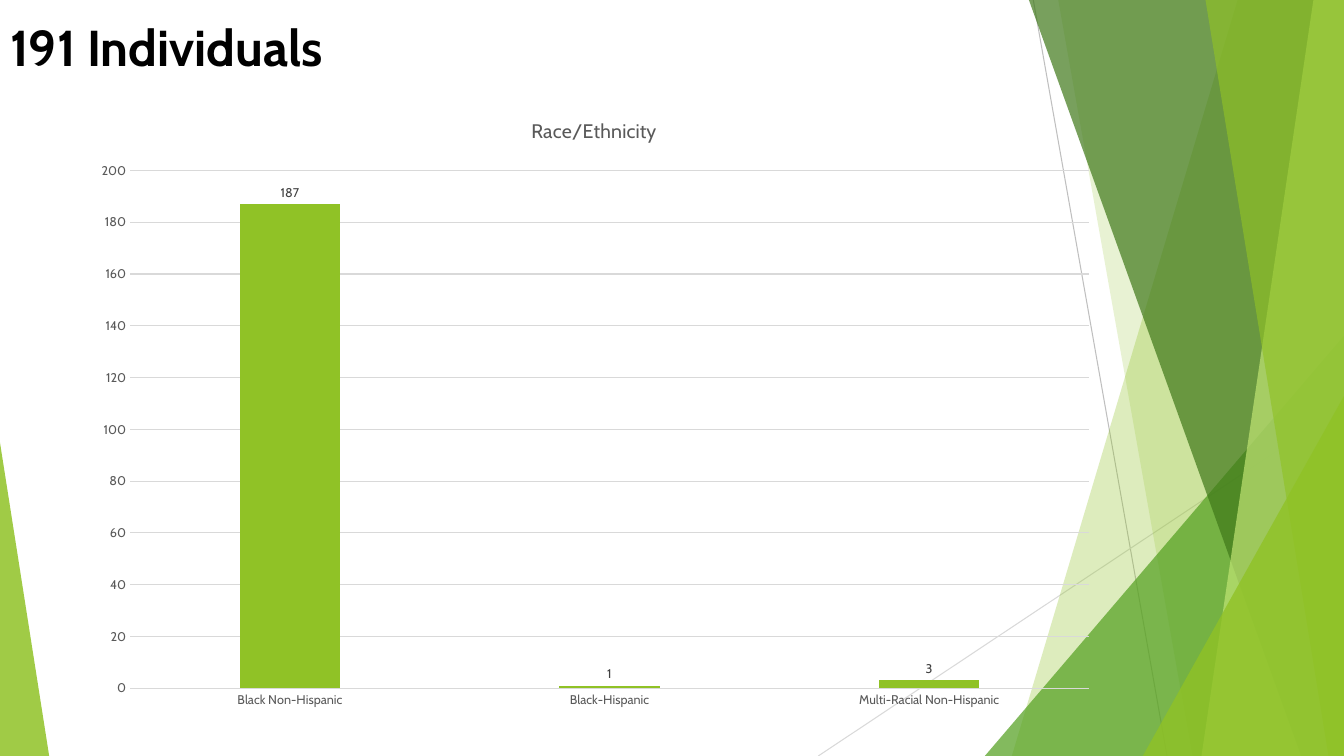
from lxml import etree
from pptx import Presentation
from pptx.chart.data import CategoryChartData
from pptx.dml.color import RGBColor
from pptx.enum.chart import XL_CHART_TYPE, XL_LABEL_POSITION, XL_TICK_MARK
from pptx.enum.shapes import MSO_CONNECTOR, MSO_SHAPE
from pptx.enum.text import MSO_ANCHOR, MSO_AUTO_SIZE, PP_ALIGN
from pptx.oxml import parse_xml
from pptx.oxml.ns import nsdecls, qn
from pptx.util import Cm, Pt

LIME = RGBColor(0x90, 0xC2, 0x26)
GREEN = RGBColor(0x54, 0xA0, 0x21)
FOREST = RGBColor(0x3F, 0x78, 0x19)
PALE_LIME = RGBColor(0xC0, 0xE4, 0x74)
BLACK = RGBColor(0x00, 0x00, 0x00)
CHARCOAL = RGBColor(0x40, 0x40, 0x40)
GREY = RGBColor(0x59, 0x59, 0x59)
SILVER = RGBColor(0xBF, 0xBF, 0xBF)
LIGHT_GREY = RGBColor(0xD9, 0xD9, 0xD9)
WIDTH, HEIGHT = 33.87, 19.05


class SlideBuilder:
    """Holds the style and the current slide, with a method per element."""

    font_name = "Cabin"
    hairline = Pt(0.75)

    def __init__(self, slide):
        self.slide = slide

    def style_font(self, font, size, color, bold=False):
        font.name = self.font_name
        font.size = Pt(size)
        font.bold = bold
        font.color.rgb = color

    def style_line(self, line, color):
        line.color.rgb = color
        line.width = self.hairline

    def paint(self, shape, color, opacity):
        shape.shadow.inherit = False
        shape.fill.solid()
        shape.fill.fore_color.rgb = color
        shape.line.fill.background()
        tint = shape.fill._xPr.find(".//" + qn("a:srgbClr"))
        etree.SubElement(tint, qn("a:alpha"), val=str(opacity * 1000))

    def ray(self, start, end, color):
        ends = [Cm(value) for value in (*start, *end)]
        ray = self.slide.shapes.add_connector(MSO_CONNECTOR.STRAIGHT, *ends)
        self.style_line(ray.line, color)
        etree.SubElement(ray._element.spPr, qn("a:effectLst"))

    def shard(self, top_x, bottom_x, color, opacity):
        outline = self.slide.shapes.build_freeform(Cm(top_x), Cm(0))
        corners = [(WIDTH, 0), (WIDTH, HEIGHT), (bottom_x, HEIGHT)]
        outline.add_line_segments([(Cm(x), Cm(y)) for x, y in corners])
        self.paint(outline.convert_to_shape(), color, opacity)

    def wedge(self, left, top, width, apex, color, opacity):
        wedge = self.slide.shapes.add_shape(
            MSO_SHAPE.ISOSCELES_TRIANGLE, Cm(left), Cm(top), Cm(width), Cm(HEIGHT - top))
        wedge.adjustments[0] = apex
        self.paint(wedge, color, opacity)

    def title(self, text, left, top, width, height):
        title = self.slide.shapes.title
        title.left, title.top = Cm(left), Cm(top)
        title.width, title.height = Cm(width), Cm(height)
        frame = title.text_frame
        frame.text = text
        frame.word_wrap = True
        frame.auto_size = MSO_AUTO_SIZE.SHAPE_TO_FIT_TEXT
        frame.vertical_anchor = MSO_ANCHOR.TOP
        heading = frame.paragraphs[0]
        heading.alignment = PP_ALIGN.LEFT
        self.style_font(heading.runs[0].font, 36, BLACK, bold=True)

    def column_chart(self, caption, counts, left, top, width, height):
        data = CategoryChartData()
        data.categories = list(counts)
        data.add_series("Series 1", list(counts.values()))
        chart = self.slide.shapes.add_chart(
            XL_CHART_TYPE.COLUMN_CLUSTERED, Cm(left), Cm(top), Cm(width), Cm(height), data).chart
        self.style_font(chart.font, 10, BLACK)
        chart.has_legend = False
        chart.has_title = True
        chart.chart_title.text_frame.text = caption
        chart.chart_title.include_in_layout = False
        self.style_font(chart.chart_title.text_frame.paragraphs[0].runs[0].font, 14, GREY)

        for axis in (chart.category_axis, chart.value_axis):
            axis.major_tick_mark = axis.minor_tick_mark = XL_TICK_MARK.NONE
            self.style_font(axis.tick_labels.font, 9, GREY)
        self.style_line(chart.category_axis.format.line, LIGHT_GREY)
        scale = chart.value_axis
        scale.minimum_scale, scale.maximum_scale, scale.major_unit = 0, 200, 20
        scale.format.line.fill.background()
        self.style_line(scale.major_gridlines.format.line, LIGHT_GREY)

        plot = chart.plots[0]
        plot.gap_width, plot.overlap = 219, -27
        plot.vary_by_categories = False
        columns = plot.series[0]
        columns.format.fill.solid()
        columns.format.fill.fore_color.rgb = LIME
        labels = columns.data_labels
        labels.show_value = True
        labels.position = XL_LABEL_POSITION.OUTSIDE_END
        self.style_font(labels.font, 9, CHARCOAL)
        self.place_plot(chart, x=0.05, y=0.12, w=0.93, h=0.83)

    def place_plot(self, chart, **fractions):
        plot_area = chart._chartSpace.chart.plotArea
        for automatic in plot_area.findall(qn("c:layout")):
            plot_area.remove(automatic)
        layout = parse_xml(
            f'<c:layout {nsdecls("c")}><c:manualLayout><c:layoutTarget val="inner"/>'
            '<c:xMode val="edge"/><c:yMode val="edge"/></c:manualLayout></c:layout>')
        for side, fraction in fractions.items():
            etree.SubElement(layout[0], qn(f"c:{side}"), val=str(fraction))
        plot_area.insert(0, layout)


def main():
    """Build the slide and save it."""
    deck = Presentation()
    deck.slide_width, deck.slide_height = Cm(WIDTH), Cm(HEIGHT)
    builder = SlideBuilder(deck.slides.add_slide(deck.slide_layouts[5]))

    builder.ray((26.04, 0), (29.41, HEIGHT), SILVER)
    builder.ray((WIDTH, 10.24), (20.62, HEIGHT), LIGHT_GREY)
    builder.shard(31.19, 25.5, LIME, 30)
    builder.shard(26.67, 30.05, LIME, 20)
    builder.wedge(24.82, 8.46, 9.05, 1, GREEN, 72)
    builder.shard(25.93, 32.79, FOREST, 70)
    builder.shard(33.1, 30.28, PALE_LIME, 70)
    builder.shard(30.38, 33.48, LIME, 65)
    builder.wedge(28.8, 9.98, 5.07, 1, LIME, 80)
    builder.wedge(0, 11.15, 1.24, 0, LIME, 85)

    counts = {"Black Non-Hispanic": 187, "Black-Hispanic": 1, "Multi-Racial Non-Hispanic": 3}
    builder.column_chart("Race/Ethnicity", counts, 1.98, 2.41, 25.98, 15.72)
    builder.title("191 Individuals", 0, 0.28, 10.19, 1.8)
    deck.save("out.pptx")


if __name__ == "__main__":
    main()
